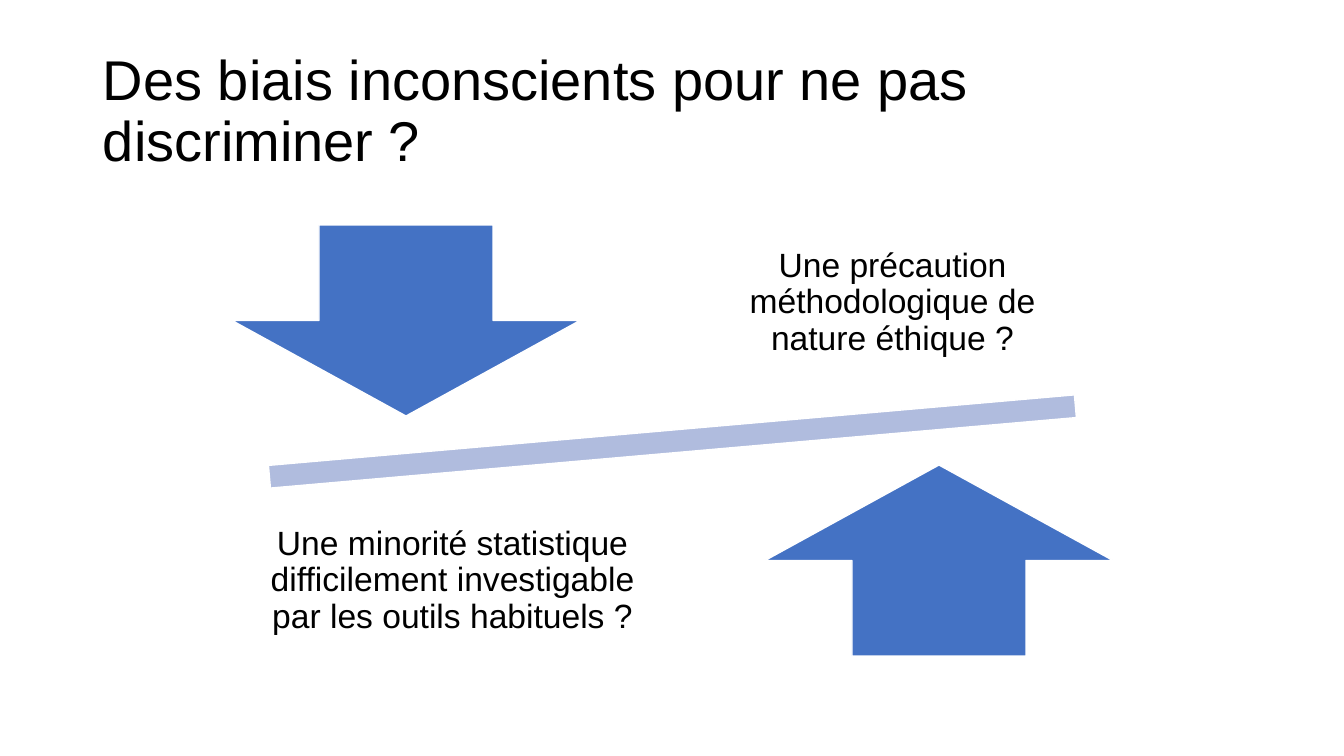
import pptx
import pptx.dml.color
import pptx.enum.shapes
import pptx.enum.text
import pptx.util
from dataclasses import dataclass

EMU_PER_PX = 914400 / 100.8
PRESET = pptx.enum.shapes.MSO_SHAPE
ALIGN = pptx.enum.text.PP_ALIGN


@dataclass(frozen=True)
class Theme:
    font: str = "Arial"
    ink: str = "000000"
    outline: str = "FFFFFF"
    arrow: str = "4472C4"
    beam: str = "B0BCDE"
    title_size: int = 40
    argument_size: int = 24
    outline_width: int = 1
    line_spacing: float = 0.9


THEME = Theme()


def px(length):
    return pptx.util.Emu(round(length * EMU_PER_PX))


def rgb(code):
    return pptx.dml.color.RGBColor.from_string(code)


def apply_format(target, values):
    for attribute, value in values.items():
        setattr(target, attribute, value)


def add_text(slide, box, wording, size, align, inset_x, inset_y):
    """Add a vertically centred, wrapping paragraph."""
    frame = slide.shapes.add_textbox(*map(px, box)).text_frame
    apply_format(frame, {
        "word_wrap": True,
        "vertical_anchor": pptx.enum.text.MSO_ANCHOR.MIDDLE,
        "margin_left": px(inset_x),
        "margin_right": px(inset_x),
        "margin_top": px(inset_y),
        "margin_bottom": px(inset_y),
    })
    paragraph = frame.paragraphs[0]
    apply_format(paragraph, {
        "text": wording,
        "alignment": align,
        "line_spacing": THEME.line_spacing,
    })
    font = paragraph.runs[0].font
    apply_format(font, {"name": THEME.font, "size": pptx.util.Pt(size)})
    font.color.rgb = rgb(THEME.ink)


def add_title(slide, box, wording):
    add_text(slide, box, wording, THEME.title_size, ALIGN.LEFT, 10, 5)


def add_argument(slide, box, wording):
    add_text(slide, box, wording, THEME.argument_size, ALIGN.CENTER, 19, 19)


def add_figure(slide, preset, box, fill, rotation=0):
    figure = slide.shapes.add_shape(preset, *map(px, box))
    figure.rotation = rotation
    figure.shadow.inherit = False
    figure.fill.solid()
    figure.fill.fore_color.rgb = rgb(fill)
    figure.line.color.rgb = rgb(THEME.outline)
    figure.line.width = pptx.util.Pt(THEME.outline_width)


def main():
    deck = pptx.Presentation()
    apply_format(deck, {"slide_width": px(1344), "slide_height": px(756)})
    slide = deck.slides.add_slide(deck.slide_layouts[6])

    add_title(slide, (93, 40, 1159, 146),
              "Des biais inconscients pour ne pas discriminer ?")
    add_figure(slide, PRESET.MATH_MINUS, (122, 393, 1101, 97), THEME.beam, 355)
    add_figure(slide, PRESET.DOWN_ARROW, (232, 225, 348, 191), THEME.arrow)
    add_argument(slide, (707, 202, 371, 202),
                 "Une précaution méthodologique de nature éthique ?")
    add_figure(slide, PRESET.UP_ARROW, (765, 465, 348, 191), THEME.arrow)
    add_argument(slide, (224, 480, 457, 202),
                 "Une minorité statistique difficilement investigable "
                 "par les outils habituels ?")

    deck.save("out.pptx")


if __name__ == "__main__":
    main()
